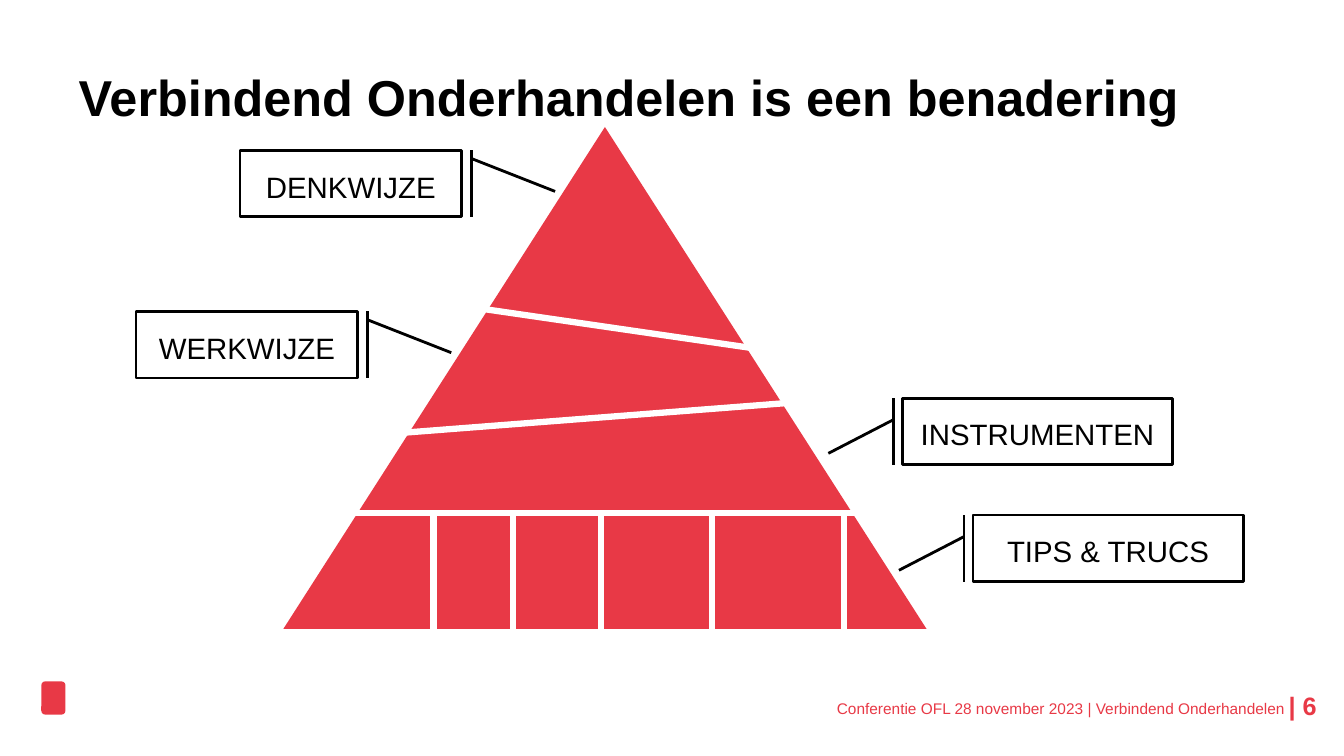
import pptx
import pptx.util
import pptx.dml.color
import pptx.enum.shapes
import pptx.enum.text
import lxml.etree

Inches = pptx.util.Inches
Pt = pptx.util.Pt
SHAPE = pptx.enum.shapes.MSO_SHAPE
ANCHOR = pptx.enum.text.MSO_ANCHOR
ALIGN = pptx.enum.text.PP_ALIGN

RED, BLACK, WHITE = "E83946", "000000", "FFFFFF"
FONT = "Arial"


def color(hex_code):
    return pptx.dml.color.RGBColor.from_string(hex_code)


def write(frame, text, size, hex_code, align, anchor, margins, bold=False):
    frame.word_wrap = True
    frame.auto_size = pptx.enum.text.MSO_AUTO_SIZE.NONE
    frame.vertical_anchor = anchor
    (frame.margin_left, frame.margin_top,
     frame.margin_right, frame.margin_bottom) = [Inches(m) for m in margins]
    paragraph = frame.paragraphs[0]
    paragraph.alignment = align
    run = paragraph.add_run()
    run.text = text
    run.font.name = FONT
    run.font.size = Pt(size)
    run.font.bold = bold
    run.font.color.rgb = color(hex_code)
    return paragraph


def add_red_shape(slide, kind, left, top, width, height):
    shape = slide.shapes.add_shape(
        kind, Inches(left), Inches(top), Inches(width), Inches(height))
    shape.shadow.inherit = False
    shape.fill.solid()
    shape.fill.fore_color.rgb = color(RED)
    shape.line.fill.background()


def add_divider(slide, x1, y1, x2, y2):
    divider = slide.shapes.add_connector(
        pptx.enum.shapes.MSO_CONNECTOR.STRAIGHT,
        Inches(x1), Inches(y1), Inches(x2), Inches(y2))
    divider.line.color.rgb = color(WHITE)
    divider.line.width = Pt(4.5)
    lxml.etree.SubElement(divider._element.spPr,
                          pptx.oxml.ns.qn("a:effectLst"))


def add_title(slide, left, top, width, height):
    title = slide.shapes.title
    title.left, title.top = Inches(left), Inches(top)
    title.width, title.height = Inches(width), Inches(height)
    write(title.text_frame, "Verbindend Onderhandelen is een benadering", 36,
          BLACK, ALIGN.LEFT, ANCHOR.MIDDLE, (0.1, 0.05, 0.1, 0.05), True)


def add_pyramid(slide, left, top, width, height):
    add_red_shape(slide, SHAPE.ISOSCELES_TRIANGLE, left, top, width, height)
    base_top = top + 3.83
    # Layer boundaries
    for x1, y1, x2, y2 in ((1.26, 1.7, 5.59, 2.33),
                           (1.1, 3.04, 6.14, 2.65),
                           (0.67, 3.83, 6.38, 3.83)):
        add_divider(slide, left + x1, top + y1, left + x2, top + y2)
    # Blocks of the bottom layer
    for x in (1.49, 2.28, 3.15, 4.25, 5.56):
        add_divider(slide, left + x, base_top, left + x, top + height)


def add_callout(slide, text, left, top, width, height, leader):
    callout = slide.shapes.add_shape(
        SHAPE.LINE_CALLOUT_1_BORDER_AND_ACCENT_BAR,
        Inches(left), Inches(top), Inches(width), Inches(height))
    callout.shadow.inherit = False
    callout.fill.background()
    callout.line.color.rgb = color(BLACK)
    callout.line.width = Pt(2)
    for index, value in enumerate(leader):
        callout.adjustments[index] = value
    paragraph = write(callout.text_frame, text, 21, BLACK, ALIGN.CENTER,
                      ANCHOR.MIDDLE, (0.16, 0.15, 0.16, 0.05))
    paragraph.line_spacing = 0.9


def add_callouts(slide):
    # Leader: start y, start x, end y, end x as shares of the box
    to_right = (0.126, 1.044, 0.62, 1.421)
    to_left = (0.324, -0.033, 0.831, -0.274)
    for text, left, top, width, leader in (
            ("DENKWIJZE", 2.38, 1.49, 2.2, to_right),
            ("WERKWIJZE", 1.35, 3.09, 2.2, to_right),
            ("INSTRUMENTEN", 8.95, 3.95, 2.68, to_left),
            ("TIPS & TRUCS", 9.65, 5.11, 2.68, to_left)):
        add_callout(slide, text, left, top, width, 0.66, leader)


def add_footer(slide, left, top, width, height):
    # Plain mark at the left
    add_red_shape(slide, SHAPE.ROUNDED_RECTANGLE, left, top, 0.24, height)
    number_left = left + width - 0.55
    # Conference line and page number
    for text, x, y, w, h, size, align, bold in (
            ("Conferentie OFL 28 november 2023 | Verbindend Onderhandelen",
             number_left - 5.53, top + 0.18, 5.5, 0.14, 11, ALIGN.RIGHT, False),
            ("| 6", number_left, top + 0.09, 0.55, 0.23, 18, ALIGN.LEFT, True)):
        box = slide.shapes.add_textbox(
            Inches(x), Inches(y), Inches(w), Inches(h))
        write(box.text_frame, text, size, RED, align, ANCHOR.TOP,
              (0, 0, 0, 0), bold)


def main():
    deck = pptx.Presentation()
    deck.slide_width, deck.slide_height = Inches(13.33), Inches(7.5)
    slide = deck.slides.add_slide(deck.slide_layouts.get_by_name("Title Only"))
    slide.background.fill.solid()
    slide.background.fill.fore_color.rgb = color(WHITE)
    add_title(slide, 0.68, 0.56, 12.1, 0.79)
    add_pyramid(slide, 2.81, 1.26, 6.38, 4.98)
    add_callouts(slide)
    add_footer(slide, 0.41, 6.76, 12.92, 0.33)
    deck.save("out.pptx")


if __name__ == "__main__":
    main()
